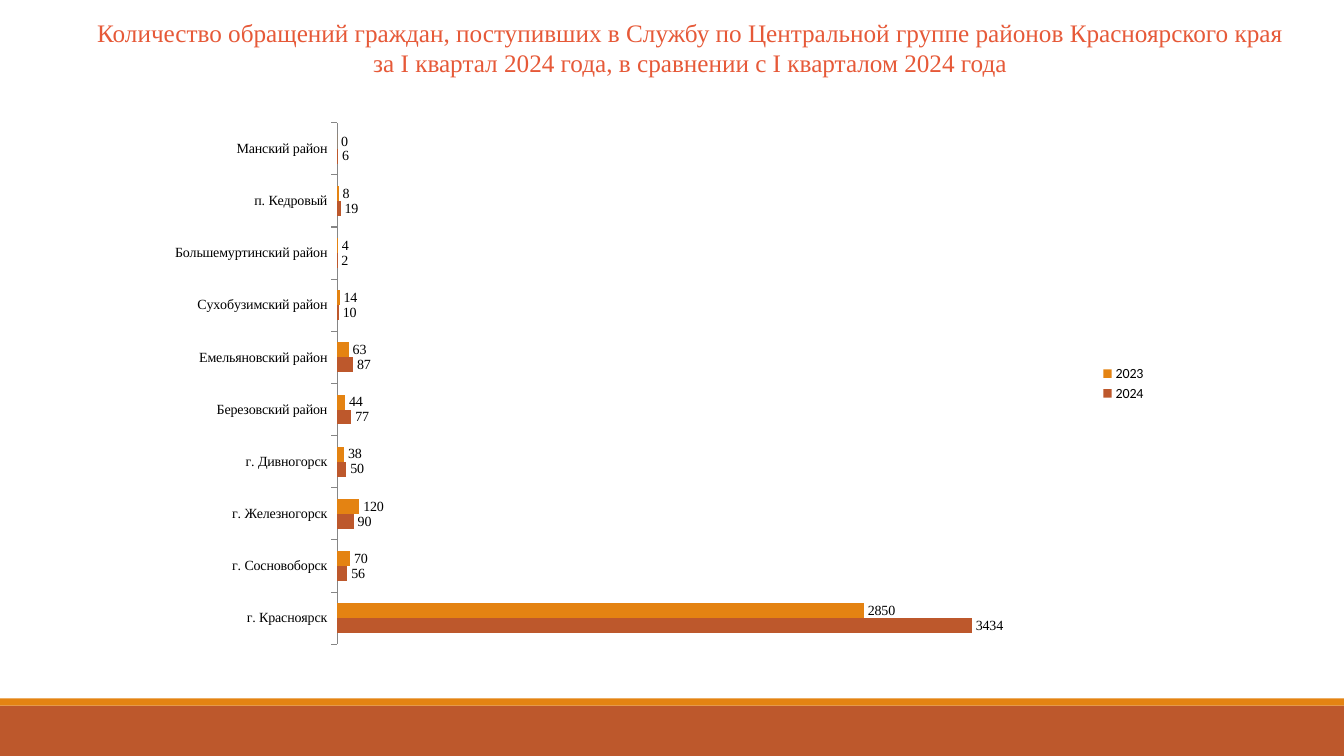
from dataclasses import dataclass

from lxml.etree import SubElement
from pptx import Presentation
from pptx.chart.chart import Chart
from pptx.chart.data import CategoryChartData
from pptx.dml.color import RGBColor
from pptx.enum.chart import XL_CHART_TYPE, XL_LABEL_POSITION, XL_LEGEND_POSITION, XL_TICK_MARK
from pptx.enum.shapes import MSO_SHAPE
from pptx.enum.text import PP_ALIGN
from pptx.oxml.ns import qn
from pptx.slide import Slide
from pptx.text.text import Font
from pptx.util import Inches, Pt

RUST = RGBColor(0xBD, 0x58, 0x2C)
AMBER = RGBColor(0xE4, 0x83, 0x12)
CORAL = RGBColor(0xE6, 0x59, 0x38)
BLACK = RGBColor(0, 0, 0)
GRAY = RGBColor(0x86, 0x86, 0x86)
SERIF = "Times New Roman"
SANS = "Calibri"
WIDTH = 13.33

TITLE = [
    "Количество обращений граждан, поступивших в Службу по Центральной группе районов Красноярского края",
    "за I квартал 2024 года, в сравнении с I кварталом 2024 года",
]
AREAS = [
    "г. Красноярск", "г. Сосновоборск", "г. Железногорск", "г. Дивногорск",
    "Березовский район", "Емельяновский район", "Сухобузимский район",
    "Большемуртинский район", "п. Кедровый", "Манский район",
]


@dataclass
class Band:
    top: float
    height: float
    color: RGBColor


@dataclass
class Year:
    name: str
    counts: list[int]
    color: RGBColor


BANDS = [Band(7, 0.5, RUST), Band(6.93, 0.07, AMBER)]
YEARS = [
    Year("2024", [3434, 56, 90, 50, 77, 87, 10, 2, 19, 6], RUST),
    Year("2023", [2850, 70, 120, 38, 44, 63, 14, 4, 8, 0], AMBER),
]
PLOT = {"x": 0.18, "y": 0.02, "w": 0.74, "h": 0.96}


def set_font(font: Font, name: str, size: float, color: RGBColor) -> None:
    font.name = name
    font.size = Pt(size)
    font.color.rgb = color


def add_text(slide: Slide, lines: list[str], *, left: float, top: float,
             width: float, height: float, size: float, color: RGBColor,
             name: str = SERIF, align: PP_ALIGN = PP_ALIGN.CENTER) -> None:
    box = slide.shapes.add_textbox(Inches(left), Inches(top), Inches(width), Inches(height))
    frame = box.text_frame
    frame.word_wrap = True
    frame.text = "\n".join(lines)
    for para in frame.paragraphs:
        para.alignment = align
        for run in para.runs:
            set_font(run.font, name, size, color)


def add_band(slide: Slide, band: Band) -> None:
    shape = slide.shapes.add_shape(MSO_SHAPE.RECTANGLE, 0, Inches(band.top),
                                   Inches(WIDTH), Inches(band.height))
    shape.shadow.inherit = False
    shape.fill.solid()
    shape.fill.fore_color.rgb = band.color
    shape.line.fill.background()


def place_plot(chart: Chart) -> None:
    area = chart._chartSpace.chart.plotArea
    for old in area.findall(qn("c:layout")):
        area.remove(old)
    layout = SubElement(area, qn("c:layout"))
    area.insert(0, layout)
    manual = SubElement(layout, qn("c:manualLayout"))
    parts = {"layoutTarget": "inner", "xMode": "edge", "yMode": "edge", **PLOT}
    for tag, value in parts.items():
        SubElement(manual, qn(f"c:{tag}")).set("val", str(value))


def add_bars(slide: Slide, years: list[Year]) -> None:
    data = CategoryChartData()
    data.categories = AREAS
    for year in years:
        data.add_series(year.name, year.counts)
    chart = slide.shapes.add_chart(XL_CHART_TYPE.BAR_CLUSTERED, Inches(1.56), Inches(1.11),
                                   Inches(9.91), Inches(5.39), data).chart
    set_font(chart.font, SANS, 10, BLACK)
    chart.has_title = False
    chart.has_legend = True
    chart.legend.position = XL_LEGEND_POSITION.RIGHT
    chart.legend.include_in_layout = False

    axis = chart.category_axis
    axis.major_tick_mark = XL_TICK_MARK.OUTSIDE
    axis.format.line.color.rgb = GRAY
    set_font(axis.tick_labels.font, SERIF, 10, BLACK)
    scale = chart.value_axis
    scale.visible = False
    scale.has_major_gridlines = False
    scale.minimum_scale = 0
    scale.maximum_scale = 4000

    plot = chart.plots[0]
    plot.gap_width = 75 * len(years)
    plot.vary_by_categories = False
    for year, series in zip(years, plot.series):
        series.format.fill.solid()
        series.format.fill.fore_color.rgb = year.color
        labels = series.data_labels
        labels.show_value = True
        labels.position = XL_LABEL_POSITION.OUTSIDE_END
        set_font(labels.font, SERIF, 10, BLACK)
    place_plot(chart)


def main() -> None:
    deck = Presentation()
    deck.slide_width = Inches(WIDTH)
    deck.slide_height = Inches(7.5)
    slide = deck.slides.add_slide(deck.slide_layouts[6])
    for band in BANDS:
        add_band(slide, band)
    add_text(slide, TITLE, left=0.75, top=0.12, width=12.19, height=0.71,
             size=18, color=CORAL)
    add_bars(slide, YEARS)
    deck.save("out.pptx")


if __name__ == "__main__":
    main()
